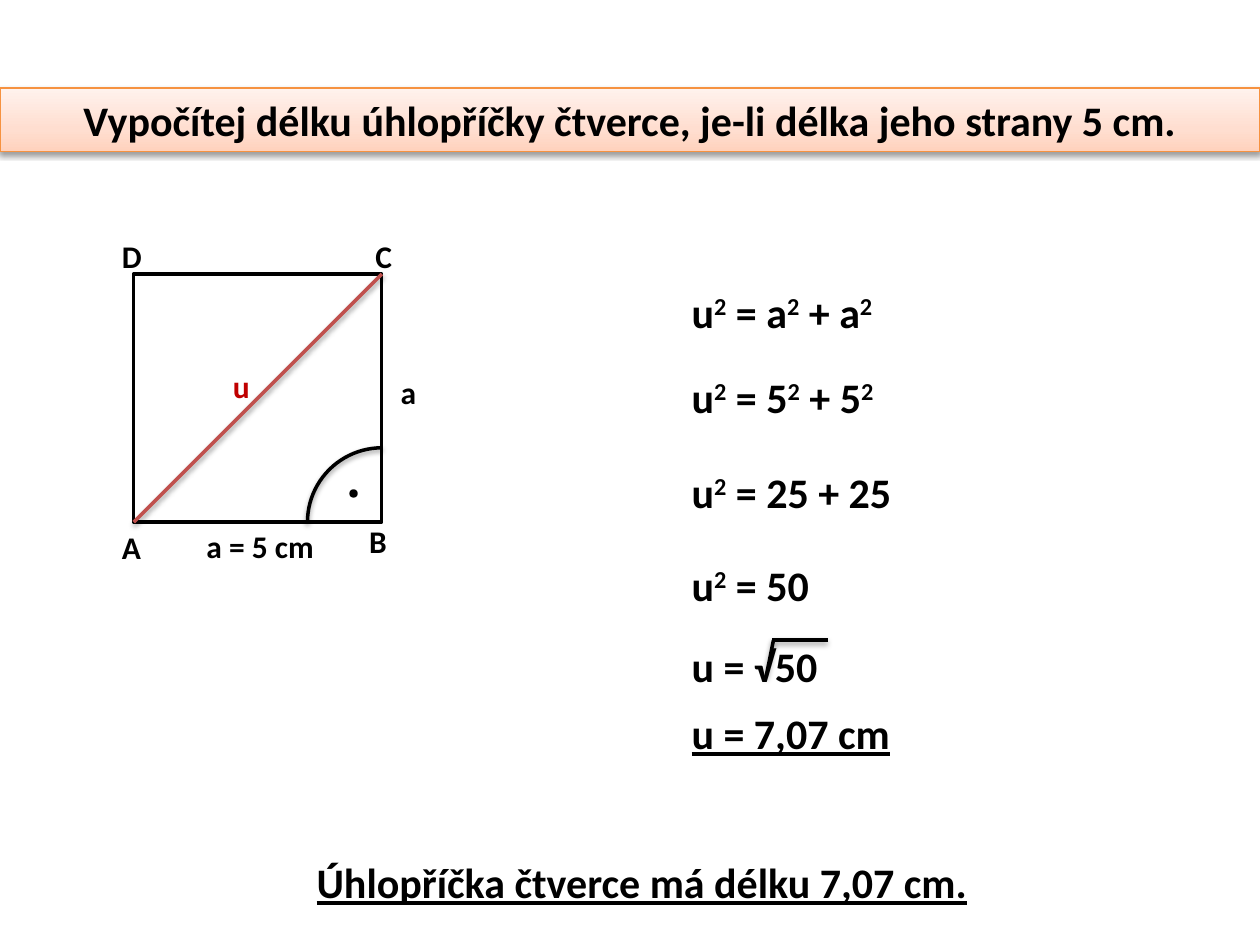
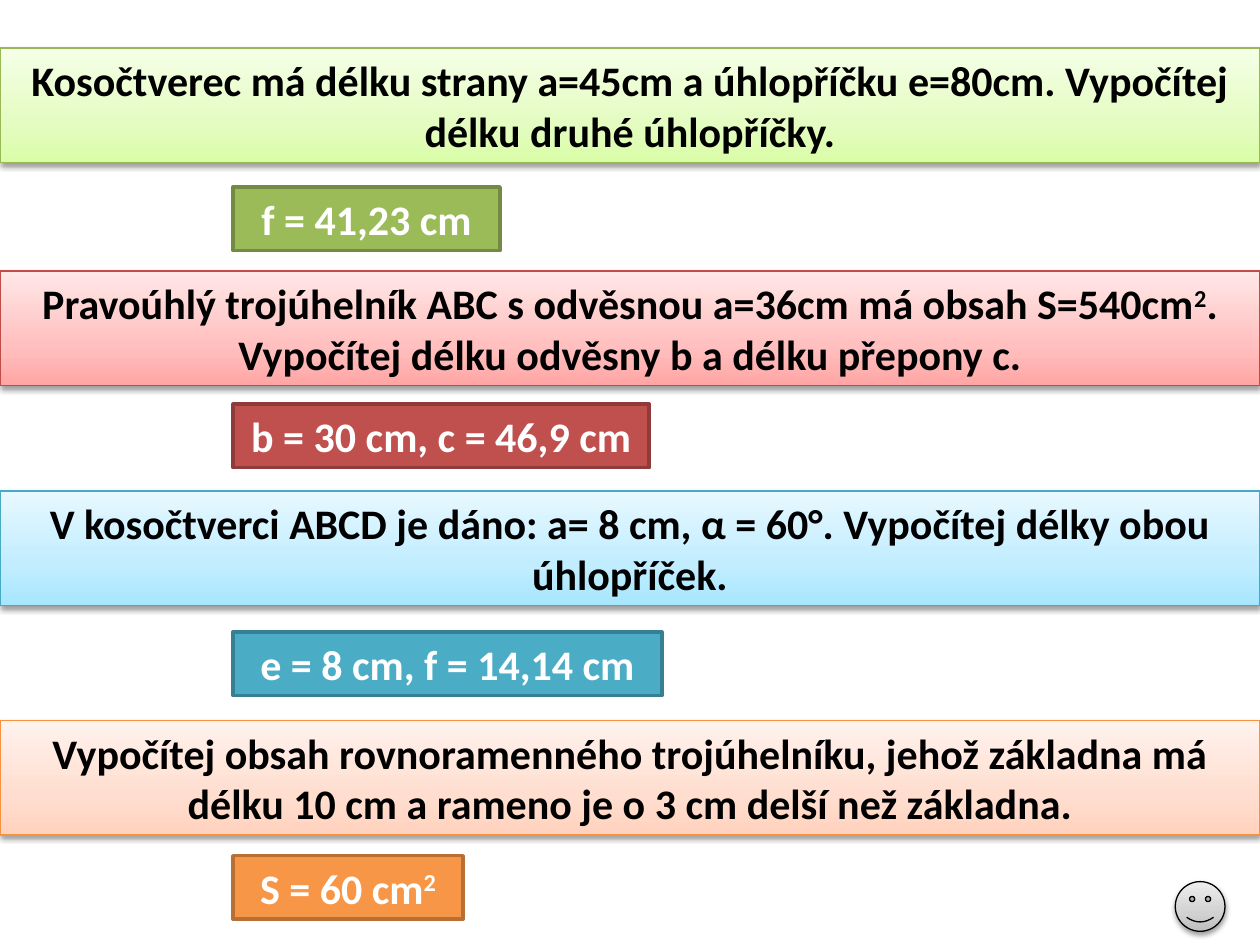
from dataclasses import dataclass
from typing import Any

import lxml.etree
import pptx
import pptx.dml.color
import pptx.enum.dml
import pptx.enum.shapes
import pptx.enum.text
import pptx.oxml
import pptx.oxml.ns
import pptx.util
import copy

Pt = pptx.util.Pt
Preset = pptx.enum.shapes.MSO_SHAPE
Align = pptx.enum.text.PP_ALIGN

FONT = "Calibri"
SLIDE_WIDTH, SLIDE_HEIGHT = 720, 540
LINE_HEIGHT = 36.35
TASK_HEIGHT = 65.4
ANSWER_LEFT = 133.2
EQUATION_LEFT = 388.1
COLORS = {
    "black": "000000",
    "white": "FFFFFF",
    "diagonal": "C0504D",
    "diagonal_label": "C00000",
}
GRADIENT_POSITIONS = (0, 0.35, 1)


@dataclass(frozen=True)
class Theme:
    gradient: tuple[str, str, str]
    band_line: str
    fill: str = "FFFFFF"
    border: str = "000000"


@dataclass(frozen=True)
class Frame:
    left: float
    top: float
    width: float
    height: float


@dataclass(frozen=True)
class Label:
    text: str
    left: float
    top: float
    width: float = 28
    color: str = "black"


@dataclass(frozen=True)
class Equation:
    text: str
    top: float
    underline: bool = False


@dataclass(frozen=True)
class Task:
    question: str
    top: float
    answer: str
    answer_top: float
    answer_width: float
    theme: str


THEMES = {
    "green": Theme(("DAFDA7", "E4FCC2", "F5FFE7"), "98B955", "9BBB59", "738A42"),
    "red": Theme(("FFA6A5", "FFC0BF", "FFE7E7"), "BF4C48", "C0504D", "8E3B39"),
    "blue": Theme(("A7E6FF", "C1EDFF", "E7F8FF"), "46AAC5", "4BACC6", "377F92"),
    "orange": Theme(("FFD2BD", "FFDED0", "FFF2ED"), "F69240", "F79646", "B76F34"),
    "gray": Theme(("BDBDBD", "D1D1D1", "EEEEEE"), "000000"),
}

SQUARE = Frame(76.4, 156.6, 141.8, 141.8)
RIGHT = SQUARE.left + SQUARE.width
BOTTOM = SQUARE.top + SQUARE.height
ARC_RADIUS = 42.5

LABELS = [
    Label("A", 62.6, 298.4),
    Label("B", 203.8, 294.8),
    Label("C", 207.4, 131.8),
    Label("D", 62.6, 131.8),
    Label("u", 126, 206, color="diagonal_label"),
    Label("a = 5 cm", 110.9, 297.6, width=111),
    Label("a", 221.8, 209.5),
]

EQUATIONS = [
    Equation("u^2 = a^2 + a^2", 160),
    Equation("u^2 = 5^2 + 5^2", 208.8),
    Equation("u^2 = 25 + 25", 262.8),
    Equation("u^2 = 50", 316),
    Equation("u = √50", 362.2),
    Equation("u = 7,07 cm", 401, underline=True),
]

TASKS = [
    Task("Kosočtverec má délku strany a=45cm a úhlopříčku e=80cm. "
         "Vypočítej délku druhé úhlopříčky.",
         27.4, "f = 41,23 cm", 106.9, 152.6, "green"),
    Task("Pravoúhlý trojúhelník ABC s odvěsnou a=36cm má obsah S=540cm^2. "
         "Vypočítej délku odvěsny b a délku přepony c.",
         154.8, "b = 30 cm, c = 46,9 cm", 231, 237.8, "red"),
    Task("V kosočtverci ABCD je dáno: a= 8 cm, α = 60°. "
         "Vypočítej délky obou úhlopříček.",
         280.6, "e = 8 cm, f = 14,14 cm", 361.2, 245, "blue"),
    Task("Vypočítej obsah rovnoramenného trojúhelníku, jehož základna má "
         "délku 10 cm a rameno je o 3 cm delší než základna.",
         411.8, "S = 60 cm^2", 489, 131.4, "orange"),
]


def rgb(value: str) -> pptx.dml.color.RGBColor:
    return pptx.dml.color.RGBColor.from_string(value)


def qualified(tag: str) -> str:
    return pptx.oxml.ns.qn(tag)


def add_shadow(shape: Any) -> None:
    properties = shape.element.spPr
    effects = properties.find(qualified("a:effectLst"))
    if effects is None:
        effects = lxml.etree.SubElement(properties, qualified("a:effectLst"))
    shadow = lxml.etree.SubElement(
        effects, qualified("a:outerShdw"), blurRad=str(Pt(3.1)), dist=str(Pt(1.6)),
        dir="5400000", rotWithShape="0")
    color = lxml.etree.SubElement(
        shadow, qualified("a:srgbClr"), val=COLORS["black"])
    lxml.etree.SubElement(color, qualified("a:alpha"), val="38000")


def write(shape: Any, text: str, size: float, color: str,
          align: Any = Align.LEFT, underline: bool = False) -> None:
    frame = shape.text_frame
    frame.word_wrap = True
    frame.auto_size = pptx.enum.text.MSO_AUTO_SIZE.SHAPE_TO_FIT_TEXT
    para = frame.paragraphs[0]
    para.alignment = align
    first, *rest = text.split("^")
    pieces = [(first, False)]
    for part in rest:
        pieces += [(part[0], True), (part[1:], False)]
    for piece, raised in pieces:
        if not piece:
            continue
        span = para.add_run()
        span.text = piece
        span.font.name = FONT
        span.font.size = Pt(size)
        span.font.bold = True
        span.font.color.rgb = rgb(color)
        if underline:
            span.font.underline = True
        if raised:
            span.font._element.set("baseline", "30000")


def add_text(page: Any, place: Frame, text: str, size: float, color: str = "black",
             align: Any = Align.LEFT, underline: bool = False) -> None:
    box = page.shapes.add_textbox(
        Pt(place.left), Pt(place.top), Pt(place.width), Pt(place.height))
    write(box, text, size, COLORS[color], align, underline)


def add_preset(page: Any, preset: Any, place: Frame, line: str,
               weight: float = 2, fill: str | None = None) -> Any:
    shape = page.shapes.add_shape(
        preset, Pt(place.left), Pt(place.top), Pt(place.width), Pt(place.height))
    shape.shadow.inherit = False
    if fill:
        shape.fill.solid()
        shape.fill.fore_color.rgb = rgb(fill)
    else:
        shape.fill.background()
    shape.line.color.rgb = rgb(line)
    shape.line.width = Pt(weight)
    return shape


def add_gradient_preset(page: Any, preset: Any, place: Frame, theme: Theme) -> Any:
    shape = add_preset(page, preset, place, theme.band_line, 0.75)
    shape.fill.gradient()
    shape.fill.gradient_angle = 90
    stop_list = shape.element.spPr.find(
        f"{qualified('a:gradFill')}/{qualified('a:gsLst')}")
    stop_list.append(copy.deepcopy(stop_list[-1]))
    for stop, position, color in zip(
            shape.fill.gradient_stops, GRADIENT_POSITIONS, theme.gradient):
        stop.position = position
        stop.color.rgb = rgb(color)
    add_shadow(shape)
    return shape


def add_band(page: Any, text: str, top: float, height: float, theme: str) -> None:
    band = add_gradient_preset(
        page, Preset.RECTANGLE, Frame(0, top, SLIDE_WIDTH, height), THEMES[theme])
    write(band, text, 24, COLORS["black"], Align.CENTER)


def add_line(page: Any, start: tuple[float, float], end: tuple[float, float],
             color: str = "black") -> None:
    line = page.shapes.add_connector(
        pptx.enum.shapes.MSO_CONNECTOR.STRAIGHT, *map(Pt, start + end))
    line.line.color.rgb = rgb(COLORS[color])
    line.line.width = Pt(2)
    add_shadow(line)


def draw_square(page: Any) -> None:
    black = COLORS["black"]
    add_preset(page, Preset.RECTANGLE, SQUARE, black, fill=COLORS["white"])
    add_line(page, (SQUARE.left, BOTTOM), (RIGHT, SQUARE.top), "diagonal")
    arc = add_preset(page, Preset.ARC, Frame(
        RIGHT - ARC_RADIUS, BOTTOM - ARC_RADIUS, 2 * ARC_RADIUS, 2 * ARC_RADIUS), black)
    arc.rotation = 270
    add_shadow(arc)
    add_preset(page, Preset.OVAL, Frame(200.6, 280.6, 2.8, 2.8), black, fill=black)
    for label in LABELS:
        add_text(page, Frame(label.left, label.top, label.width, 29),
                 label.text, 18, label.color)


def build_example(page: Any) -> None:
    add_band(page, "Vypočítej délku úhlopříčky čtverce, je-li délka jeho strany 5 cm.",
             50.3, LINE_HEIGHT, "orange")
    draw_square(page)
    for equation in EQUATIONS:
        add_text(page, Frame(EQUATION_LEFT, equation.top, 149, LINE_HEIGHT),
                 equation.text, 24, underline=equation.underline)
    add_line(page, (441.4, 365.8), (473, 365.8))
    add_line(page, (442, 365.8), (437.8, 386.6))
    add_text(page, Frame(33.8, 486, 666, LINE_HEIGHT),
             "Úhlopříčka čtverce má délku 7,07 cm.", 24,
             align=Align.CENTER, underline=True)


def build_exercises(page: Any) -> None:
    for task in TASKS:
        theme = THEMES[task.theme]
        add_band(page, task.question, task.top, TASK_HEIGHT, task.theme)
        answer = add_preset(
            page, Preset.RECTANGLE,
            Frame(ANSWER_LEFT, task.answer_top, task.answer_width, LINE_HEIGHT),
            theme.border, fill=theme.fill)
        write(answer, task.answer, 24, COLORS["white"], Align.CENTER)
    add_gradient_preset(
        page, Preset.SMILEY_FACE, Frame(671.6, 503.8, 28.4, 28.4), THEMES["gray"])


def main() -> None:
    deck = pptx.Presentation()
    deck.slide_width = Pt(SLIDE_WIDTH)
    deck.slide_height = Pt(SLIDE_HEIGHT)
    for build in (build_example, build_exercises):
        build(deck.slides.add_slide(deck.slide_layouts[6]))
    deck.save("out.pptx")


if __name__ == "__main__":
    main()
